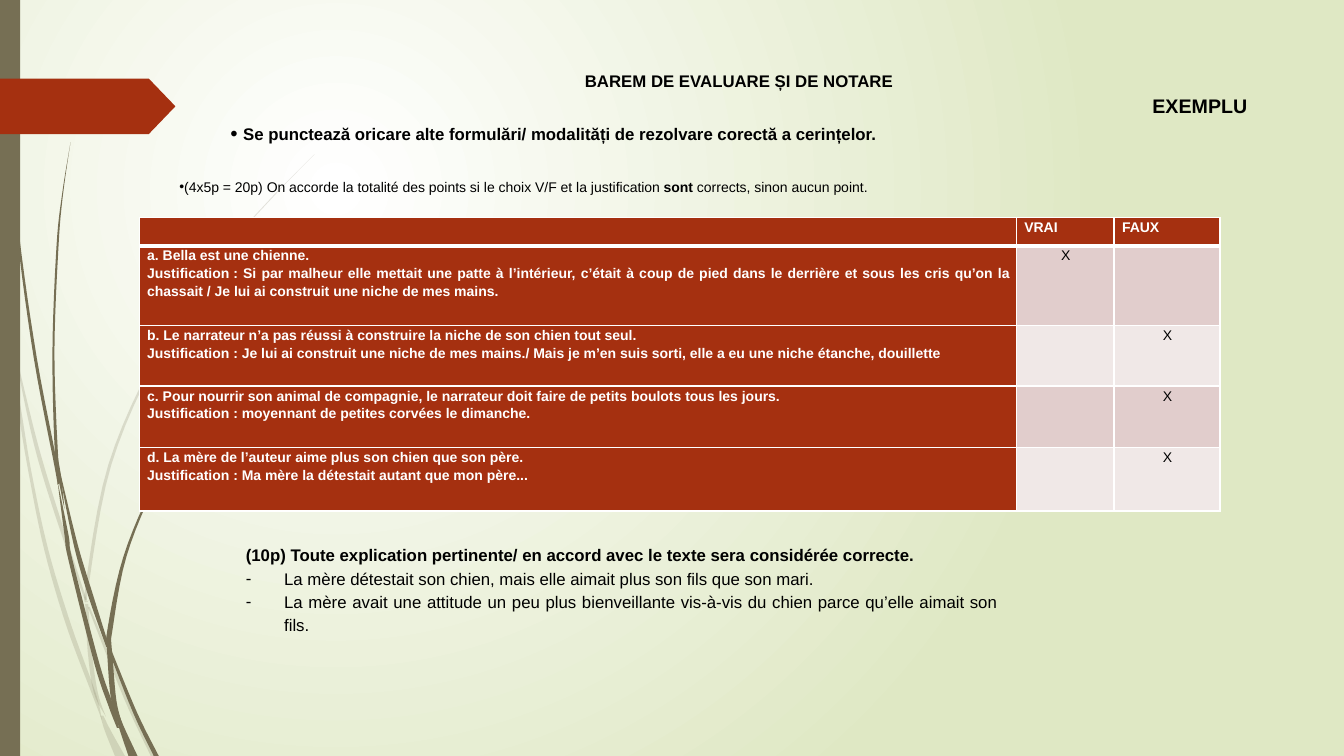
from pptx import Presentation
from pptx.util import Inches, Pt
from pptx.dml.color import RGBColor
from pptx.enum.shapes import MSO_SHAPE as Shape
from pptx.enum.text import PP_ALIGN as Align
from pptx.oxml import parse_xml
from pptx.oxml.ns import nsdecls, qn
from lxml.etree import SubElement

BLACK = RGBColor(0, 0, 0)
WHITE = RGBColor(255, 255, 255)
GREEN = RGBColor(0xDF, 0xE8, 0xC4)
OLIVE = RGBColor(0x76, 0x6F, 0x54)
RUST = RGBColor(0xA5, 0x30, 0x10)
ROSE = RGBColor(0xE1, 0xCD, 0xCC)
BLUSH = RGBColor(0xF0, 0xE8, 0xE7)

deck = Presentation()
deck.slide_width, deck.slide_height = Inches(13.33), Inches(7.5)
slide = deck.slides.add_slide(deck.slide_layouts[6])
shapes = slide.shapes


def say(frame, text, size=12, bold=False, ink=BLACK, align=Align.LEFT,
        space=1.15, bullet=None, indent=0, para=None):
    """Add a paragraph, or go on with para; ** switches bold within the text."""
    if para is None:
        para = frame.paragraphs[0]
        if para.runs:
            para = frame.add_paragraph()
        para.alignment, para.line_spacing = align, space
        if bullet:
            props = para._p.get_or_add_pPr()
            props.set("marL", str(Inches(indent)))
            props.set("indent", str(-Inches(indent)))
            SubElement(props, qn("a:buFont")).set("typeface", "Arial")
            SubElement(props, qn("a:buChar")).set("char", bullet)
    for i, part in enumerate(text.split("**")):
        run = para.add_run()
        run.text = part
        font = run.font
        font.name, font.size, font.color.rgb = "Arial", Pt(size), ink
        font.bold = bold != (i % 2 == 1)
    return para


def paint(shape, alpha=100):
    shape.shadow.inherit = False
    shape.fill.solid()
    shape.fill.fore_color.rgb = OLIVE
    shape.line.fill.background()
    if alpha < 100:
        tint = shape._element.spPr.find(".//" + qn("a:srgbClr"))
        SubElement(tint, qn("a:alpha")).set("val", str(alpha * 1000))


# Background
fill = slide.background.fill
fill.gradient()
for stop, color in zip(fill.gradient_stops, (WHITE, GREEN)):
    stop.color.rgb = color
fill.gradient_stops[0].position, fill.gradient_stops[1].position = 0, 1
grad = slide._element.find(".//" + qn("a:gradFill"))
grad.replace(grad.find(qn("a:lin")), parse_xml(
    f'<a:path {nsdecls("a")} path="circle">'
    '<a:fillToRect l="50000" t="50000" r="100000" b="100000"/></a:path>'))

# Grass: each blade is opacity and nodes of centre x, y and width
blades = [
    (20, [(0, 2.9, 0.01), (0.04, 3.17, 0.03), (0.11, 3.5, 0)]),
    (20, [(0.15, 3.5, 0.01), (0.36, 4.42, 0.04), (0.6, 5.21, 0.04), (0.85, 5.95, 0.02)]),
    (20, [(0.88, 6.02, 0.02), (1.25, 6.93, 0.04), (1.52, 7.5, 0.05)]),
    (20, [(0.11, 3.5, 0.01), (0.2, 4.1, 0.03), (0.3, 4.7, 0.03),
          (0.46, 5.46, 0.04), (0.68, 6.2, 0.05), (0.93, 6.88, 0.04), (1.01, 7.14, 0)]),
    (20, [(1.01, 7.1, 0.03), (1.07, 7.25, 0.06), (1.19, 7.5, 0.1)]),
    (20, [(3.12, 1.53, 0), (2.68, 1.98, 0.01), (2.28, 2.45, 0.01), (1.59, 3.48, 0.02),
          (1.09, 4.61, 0.03), (0.86, 5.84, 0.03), (0.88, 5.96, 0)]),
    (20, [(0.86, 5.99, 0.03), (0.89, 6.46, 0.04), (0.95, 6.87, 0.04), (1.05, 7.11, 0)]),
    (100, [(0.04, 0, 0.01), (0.07, 1.1, 0.01), (0.18, 2.33, 0.02), (0.35, 3.55, 0.03),
           (0.56, 4.65, 0.03), (0.57, 4.81, 0)]),
    (100, [(0.57, 4.77, 0), (0.66, 5.31, 0.04), (0.7, 5.56, 0.04), (0.96, 6.58, 0.05),
           (1.1, 7, 0.05), (1.17, 7.22, 0.02)]),
    (100, [(1.12, 6.95, 0.02), (1.2, 7.2, 0.05), (1.32, 7.5, 0.09)]),
    (100, [(0.7, 1.41, 0), (0.62, 1.93, 0.01), (0.57, 2.45, 0.02), (0.53, 3.49, 0.02),
           (0.56, 4.5, 0.03), (0.6, 4.72, 0.01)]),
    (100, [(0.56, 4.5, 0.01), (0.59, 4.72, 0.03), (0.64, 5.05, 0)]),
    (100, [(0.6, 4.72, 0.01), (0.75, 5.4, 0.04), (0.9, 5.91, 0.05), (1.07, 6.42, 0.03)]),
    (100, [(1.09, 6.45, 0.03), (1.34, 7.07, 0.04), (1.55, 7.5, 0.05)]),
    (100, [(2.6, 3.44, 0), (2.31, 3.74, 0.01), (2.04, 4.06, 0.02), (1.57, 4.75, 0.02),
           (1.24, 5.52, 0.03), (1.08, 6.32, 0.05), (1.1, 6.41, 0)]),
    (100, [(1.08, 6.32, 0.04), (1.09, 6.5, 0.05), (1.13, 6.95, 0.05), (1.21, 7.19, 0.01)]),
]
STEPS = 6
for alpha, nodes in blades:
    ends = [nodes[0]] + nodes + [nodes[-1]]
    curve = []
    for four in zip(ends, ends[1:], ends[2:], ends[3:]):
        for step in range(STEPS):
            t = step / STEPS
            curve.append([b + t * (c - a) / 2 + t * t * (a - 2.5 * b + 2 * c - d / 2)
                          + t ** 3 * (1.5 * (b - c) + (d - a) / 2)
                          for a, b, c, d in zip(*four)])
    curve.append(nodes[-1])
    edge = [(x + w / 2, y) for x, y, w in curve]
    edge += [(x - w / 2, y) for x, y, w in reversed(curve)]
    edge = [(Inches(max(x, 0)), Inches(y)) for x, y in edge]
    pen = shapes.build_freeform(*edge[0])
    pen.add_line_segments(edge[1:])
    paint(pen.convert_to_shape(), alpha)

# Side bar and arrow tag
paint(shapes.add_shape(Shape.RECTANGLE, 0, 0, Inches(0.2), Inches(7.5)))
tag = shapes.add_shape(Shape.PENTAGON, 0, Inches(0.78), Inches(1.74), Inches(0.55))
paint(tag)
tag.fill.fore_color.rgb = RUST
tag.adjustments[0] = 0.48

# Table
widths = [8.7, 0.97, 1.05]
heights = [0.27, 0.79, 0.6, 0.61, 0.63]
rows = [
    ("", "VRAI", "FAUX"),
    ("a. Bella est une chienne.\nJustification\u00a0: Si par malheur elle mettait une patte à l’intérieur, "
     "c’était à coup de pied dans le derrière et sous les cris qu’on la chassait / "
     "Je lui ai construit une niche de mes mains.", "X", ""),
    ("b. Le narrateur n’a pas réussi à construire la niche de son chien tout seul.\n"
     "Justification\u00a0: Je lui ai construit une niche de mes mains./ Mais je m’en suis sorti, "
     "elle a eu une niche étanche, douillette", "", "X"),
    ("c. Pour nourrir son animal de compagnie, le narrateur doit faire de petits boulots "
     "tous les jours.\nJustification\u00a0: moyennant de petites corvées le dimanche.", "", "X"),
    ("d. La mère de l’auteur aime plus son chien que son père.\n"
     "Justification\u00a0: Ma mère la détestait autant que mon père...", "", "X"),
]
table = shapes.add_table(5, 3, Inches(1.38), Inches(2.16),
                         Inches(sum(widths)), Inches(sum(heights))).table
for col, width in zip(table.columns, widths):
    col.width = Inches(width)
for r, row in enumerate(rows):
    table.rows[r].height = Inches(heights[r])
    for c, text in enumerate(row):
        cell = table.cell(r, c)
        cell.margin_left, cell.margin_right = Inches(0.08), Inches(0.07)
        cell.margin_top = cell.margin_bottom = 0
        head = r == 0 or c == 0
        align = Align.LEFT if r == 0 else Align.JUSTIFY if c == 0 else Align.CENTER
        for line in text.split("\n"):
            say(cell.text_frame, line, 10, head, WHITE if head else BLACK, align)
        props = cell._tc.get_or_add_tcPr()
        for side in "LRTB":
            thick = 3 if (r, side) in ((0, "B"), (1, "T")) else 1
            props.append(parse_xml(
                f'<a:ln{side} {nsdecls("a")} w="{Pt(thick)}"><a:solidFill>'
                f'<a:srgbClr val="{WHITE}"/></a:solidFill></a:ln{side}>'))
        cell.fill.solid()
        cell.fill.fore_color.rgb = RUST if head else ROSE if r % 2 else BLUSH

# Text boxes
frames = []
for place in ((2.19, 0.62, 10.28, 0.85), (1.68, 1.72, 10.92, 0.44), (2.34, 5.33, 7.66, 1.03)):
    frame = shapes.add_textbox(*map(Inches, place)).text_frame
    frame.word_wrap = True
    frames.append(frame)
title, note, key = frames

say(title, "BAREM DE EVALUARE ȘI DE NOTARE", bold=True, align=Align.CENTER)
say(title, "EXEMPLU", 14, True, align=Align.RIGHT)
rule = say(title, "• ", 14, True, align=Align.JUSTIFY)
say(title, "Se punctează oricare alte formulări/ modalități de rezolvare corectă a cerințelor.",
    bold=True, para=rule)
say(note, "(4x5p = 20p) On accorde la totalité des points si le choix V/F et la justification"
    "** sont **corrects, sinon aucun point.", 10, space=1, bullet="•")
say(key, "(10p) Toute explication pertinente/ en accord avec le texte sera considérée correcte.",
    bold=True)
say(key, "La mère détestait son chien, mais elle aimait plus son fils que son mari.",
    bullet="-", indent=0.38)
say(key, "La mère avait une attitude un peu plus bienveillante vis-à-vis du chien "
    "parce qu’elle aimait son fils.", align=Align.JUSTIFY, bullet="-", indent=0.38)

deck.save("out.pptx")
